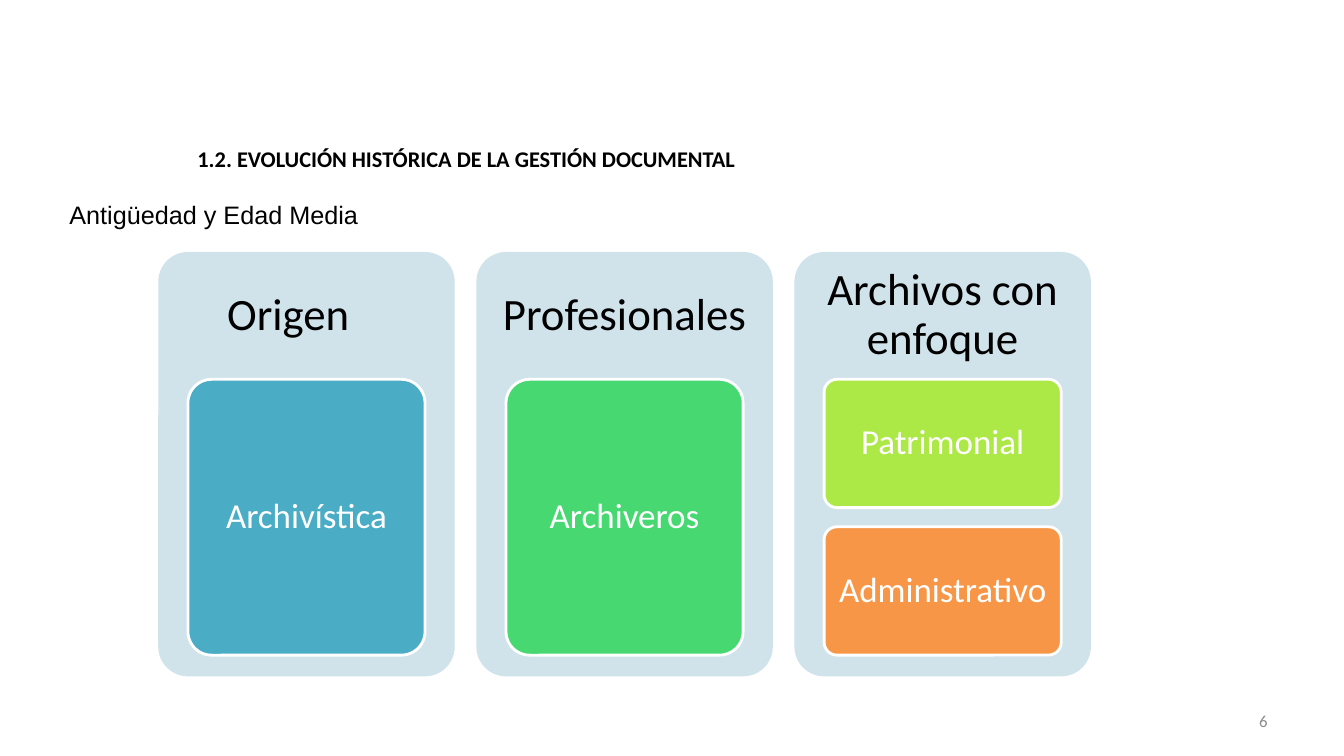
from pptx import Presentation
from pptx.dml.color import RGBColor
from pptx.enum import shapes, text
from pptx.util import Inches, Pt

COLORS = {"panel": "D0E3EA", "blue": "4BACC6", "green": "47D872",
          "lime": "ACE946", "orange": "F79646", "white": "FFFFFF",
          "black": "000000", "gray": "8C8C8C"}
LEFT, TOP, WIDTH, HEIGHT = 1.57, 2.5, 2.94, 4.21
PITCH = 3.155                # distance between column starts
HEAD = 0.3 * HEIGHT          # share of a column used by its heading
STACK = 0.65 * HEIGHT        # share used by its cards
GAP = 0.19
COLUMNS = [
    ("Origen", [("Archivística", "blue")], 0.36),
    ("Profesionales", [("Archiveros", "green")], 0),
    ("Archivos con enfoque",
     [("Patrimonial", "lime"), ("Administrativo", "orange")], 0),
]
ALIGN = text.PP_ALIGN
ANCHOR = text.MSO_ANCHOR


def color(name):
    return RGBColor.from_string(COLORS[name])


def write(shape, words, size, tint="black", font="Calibri", bold=False,
          align=ALIGN.LEFT, anchor=ANCHOR.TOP, pads=(0.1, 0.05, 0.1, 0.05),
          spacing=1.0):
    frame = shape.text_frame
    frame.word_wrap = True
    frame.vertical_anchor = anchor
    (frame.margin_left, frame.margin_top,
     frame.margin_right, frame.margin_bottom) = map(Inches, pads)
    para = frame.paragraphs[0]
    para.text = words
    para.alignment = align
    para.line_spacing = spacing
    para.font.size = Pt(size)
    para.font.name = font
    para.font.bold = bold
    para.font.color.rgb = color(tint)


def label(slide, box, words, size, **style):
    write(slide.shapes.add_textbox(*map(Inches, box)), words, size, **style)


def panel(slide, box, fill, edge=False):
    shape = slide.shapes.add_shape(
        shapes.MSO_SHAPE.ROUNDED_RECTANGLE, *map(Inches, box))
    shape.adjustments[0] = 0.1
    shape.shadow.inherit = False
    shape.fill.solid()
    shape.fill.fore_color.rgb = color(fill)
    if edge:
        shape.line.color.rgb = color("white")
        shape.line.width = Pt(2)
    else:
        shape.line.fill.background()
    return shape


def column(slide, left, title, cards, shift):
    """Draw a heading over equal cards; shift is extra right padding."""
    panel(slide, (left, TOP, WIDTH, HEIGHT), "panel")
    label(slide, (left, TOP, WIDTH, HEAD), title, 32, align=ALIGN.CENTER,
          anchor=ANCHOR.MIDDLE, pads=(0.13, 0.13, 0.13 + shift, 0.13),
          spacing=0.9)
    high = (STACK - GAP * (len(cards) - 1)) / len(cards)
    for row, (words, fill) in enumerate(cards):
        top = TOP + HEAD + row * (high + GAP)
        card = panel(slide, (left + 0.1 * WIDTH, top, 0.8 * WIDTH, high),
                     fill, edge=True)
        write(card, words, 25, tint="white", align=ALIGN.CENTER,
              anchor=ANCHOR.MIDDLE, pads=(0.07, 0.05, 0.07, 0.05),
              spacing=0.9)


def main():
    deck = Presentation()
    deck.slide_width, deck.slide_height = Inches(13.33), Inches(7.5)
    slide = deck.slides.add_slide(deck.slide_layouts[6])
    label(slide, (1.86, 1.39, 5.98, 0.37),
          "1.2. EVOLUCIÓN HISTÓRICA DE LA GESTIÓN DOCUMENTAL", 16, bold=True)
    label(slide, (0.59, 1.93, 4.26, 0.4), "Antigüedad y Edad Media", 18,
          font="Arial")
    for index, (title, cards, shift) in enumerate(COLUMNS):
        column(slide, LEFT + index * PITCH, title, cards, shift)
    label(slide, (9.56, 6.95, 3.11, 0.4), "6", 12, tint="gray",
          align=ALIGN.RIGHT, anchor=ANCHOR.MIDDLE)
    deck.save("out.pptx")


if __name__ == "__main__":
    main()
